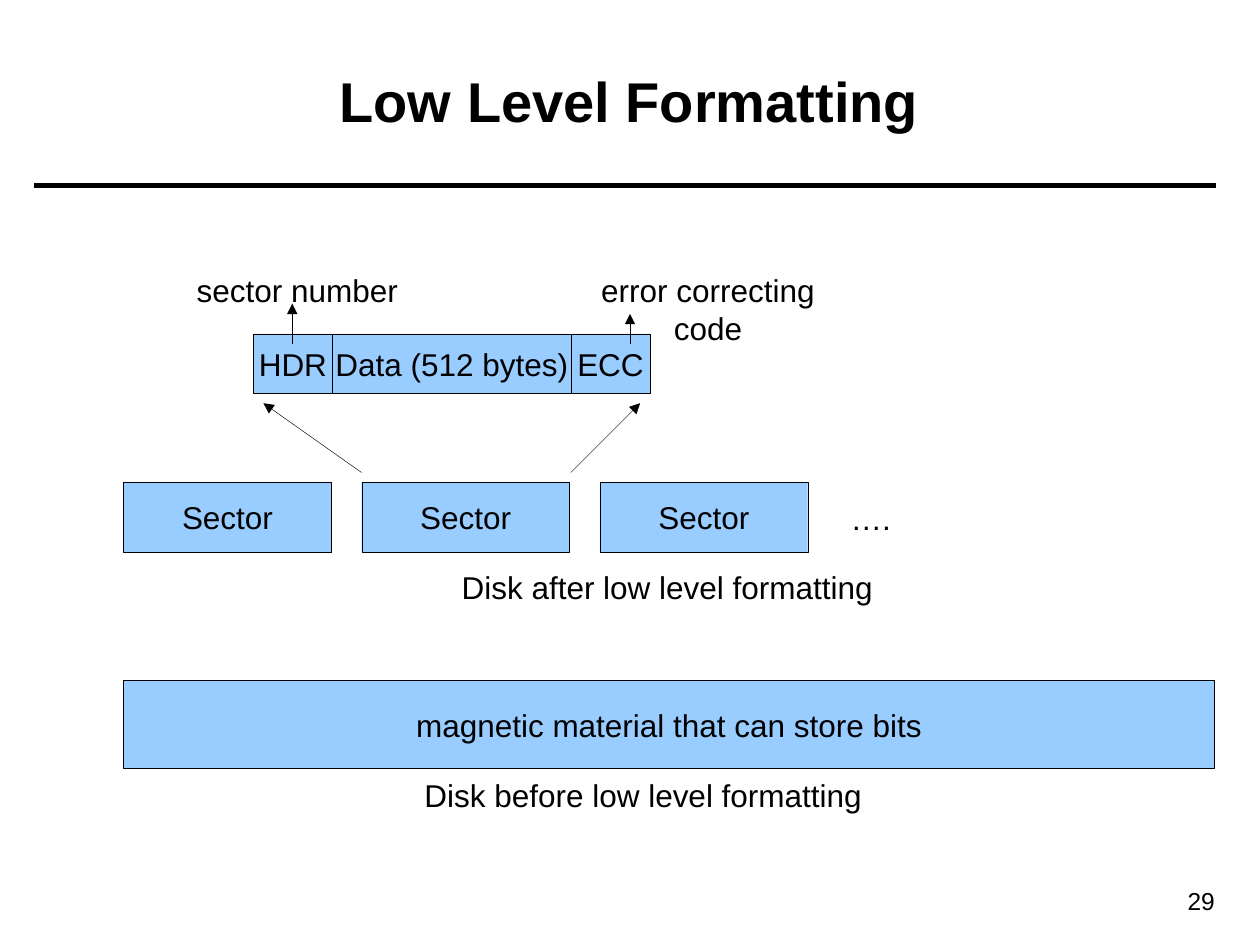
"""Build the slide on low level formatting of a disk."""
from lxml import etree
from pptx import Presentation
from pptx import util as u
from pptx.dml.color import RGBColor
from pptx.enum import shapes, text
from pptx.oxml import ns

BLACK = RGBColor(0x00, 0x00, 0x00)
LIGHT_BLUE = RGBColor(0x99, 0xCC, 0xFF)
FONT = "Arial"
BODY_SIZE = 18
THIN = 0.25

TITLE = ("Low Level Formatting", (25.2, 12.2, 668.9, 90))
PAGE_NUMBER = ("29", (626.4, 502.6, 74.9, 24.5))
SECTORS = ["Sector", "Sector", "Sector"]
SECTOR_FIELDS = [("HDR", 45.4), ("Data (512 bytes)", 136.1), ("ECC", 45.4)]
MATERIAL = ("magnetic material that can store bits", (70.6, 388.8, 623.5, 50.4))
LABELS = [
    ("….", (478.8, 281.5, 37.4, 28.8)),
    ("Disk before low level formatting ", (235.4, 439.9, 269.3, 28.8)),
    ("Disk after low level formatting ", (254.2, 321.1, 254.2, 28.8)),
    ("sector number", (105.1, 151.2, 129.6, 28.8)),
    ("error correcting code", (314.6, 151.2, 180, 28.8)),
]
RULE = (19.4, 105.8, 694.8, 105.8)
ARROWS = [
    (326.2, 270, 365.8, 230.4),
    (206.6, 270, 150.5, 230.4),
    (167, 196.6, 167, 173.5),
    (360, 196.6, 360, 179.3),
]

SECTOR_LEFT, SECTOR_TOP, SECTOR_WIDTH, SECTOR_HEIGHT = 70.6, 275.8, 118.8, 39.6
SECTOR_PITCH = 136.1
FIELD_LEFT, FIELD_TOP, FIELD_HEIGHT = 144.7, 190.8, 33.8


def points(values):
    return [u.Pt(value) for value in values]


def write(shape, words, size=BODY_SIZE, bold=False, align=text.PP_ALIGN.CENTER):
    paragraph = shape.text_frame.paragraphs[0]
    paragraph.alignment = align
    run = paragraph.add_run()
    run.text = words
    run.font.name = FONT
    run.font.size = u.Pt(size)
    run.font.bold = bold
    run.font.color.rgb = BLACK


def add_box(slide, words, frame):
    shape = slide.shapes.add_shape(shapes.MSO_SHAPE.RECTANGLE, *points(frame))
    shape.shadow.inherit = False
    shape.fill.solid()
    shape.fill.fore_color.rgb = LIGHT_BLUE
    shape.line.color.rgb = BLACK
    shape.line.width = u.Pt(THIN)
    shape.text_frame.word_wrap = False
    shape.text_frame.vertical_anchor = text.MSO_ANCHOR.MIDDLE
    write(shape, words)


def add_label(slide, words, frame):
    shape = slide.shapes.add_textbox(*points(frame))
    shape.text_frame.word_wrap = False
    shape.text_frame.auto_size = text.MSO_AUTO_SIZE.SHAPE_TO_FIT_TEXT
    write(shape, words)


def add_line(slide, ends, width=THIN, arrow=False):
    line = slide.shapes.add_connector(shapes.MSO_CONNECTOR.STRAIGHT, *points(ends))
    line.line.color.rgb = BLACK
    line.line.width = u.Pt(width)
    if arrow:
        outline = line.line._get_or_add_ln()
        etree.SubElement(outline, ns.qn("a:tailEnd"), type="triangle")
    etree.SubElement(line._element.spPr, ns.qn("a:effectLst"))


def add_title(slide):
    words, frame = TITLE
    title = slide.shapes.title
    title.left, title.top, title.width, title.height = points(frame)
    title.text_frame.vertical_anchor = text.MSO_ANCHOR.MIDDLE
    write(title, words, size=32, bold=True)


def add_page_number(slide):
    words, frame = PAGE_NUMBER
    number = slide.shapes.add_textbox(*points(frame))
    number.text_frame.word_wrap = True
    write(number, words, size=14, align=text.PP_ALIGN.RIGHT)


def main():
    presentation = Presentation()
    presentation.slide_width, presentation.slide_height = points((720, 540))
    slide = presentation.slides.add_slide(presentation.slide_layouts[5])

    add_title(slide)
    add_line(slide, RULE, width=3)
    add_page_number(slide)
    for index, words in enumerate(SECTORS):
        left = SECTOR_LEFT + index * SECTOR_PITCH
        add_box(slide, words, (left, SECTOR_TOP, SECTOR_WIDTH, SECTOR_HEIGHT))
    left = FIELD_LEFT
    for words, width in SECTOR_FIELDS:
        add_box(slide, words, (left, FIELD_TOP, width, FIELD_HEIGHT))
        left += width
    add_box(slide, *MATERIAL)
    for ends in ARROWS:
        add_line(slide, ends, arrow=True)
    for words, frame in LABELS:
        add_label(slide, words, frame)

    presentation.save("out.pptx")


if __name__ == "__main__":
    main()
